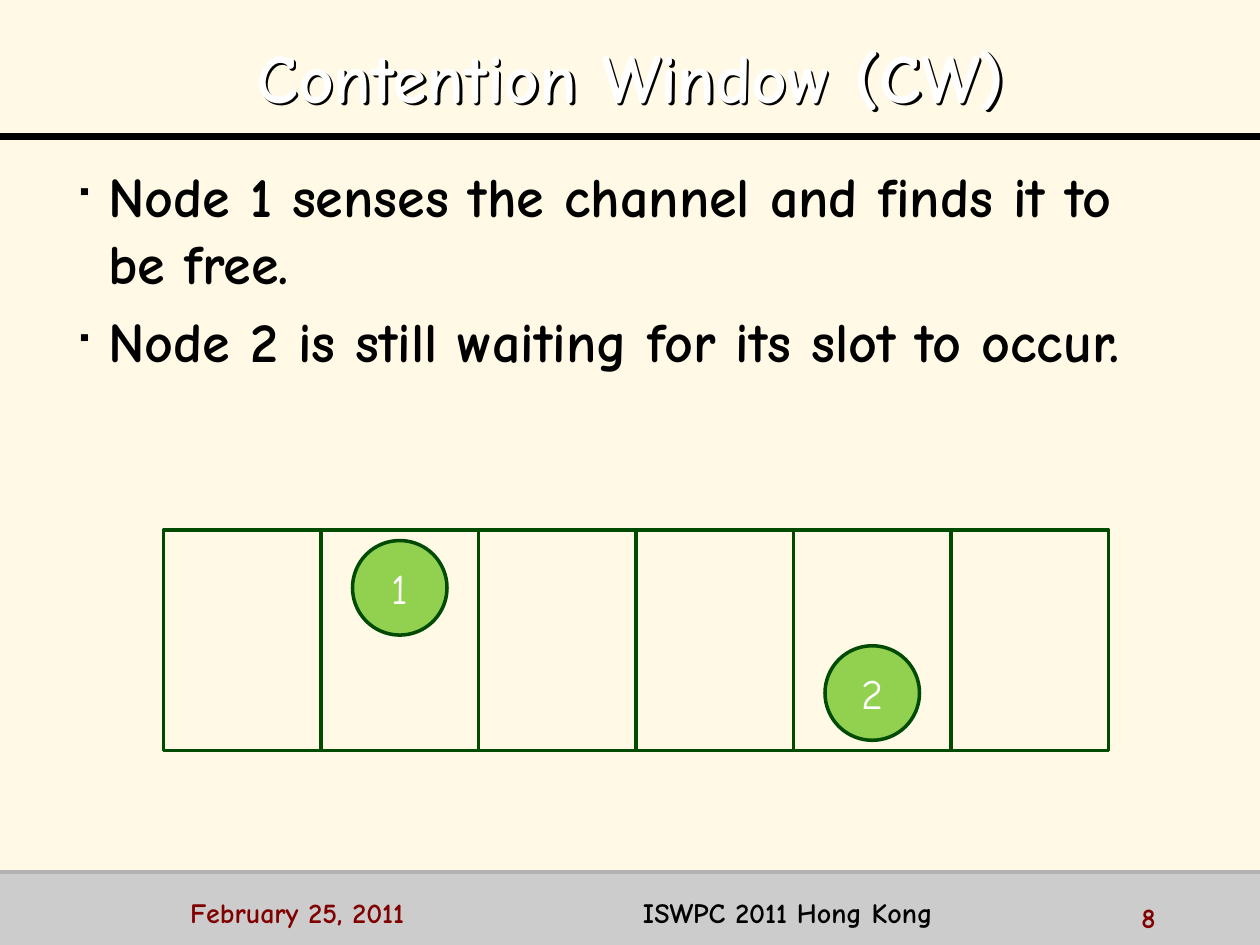
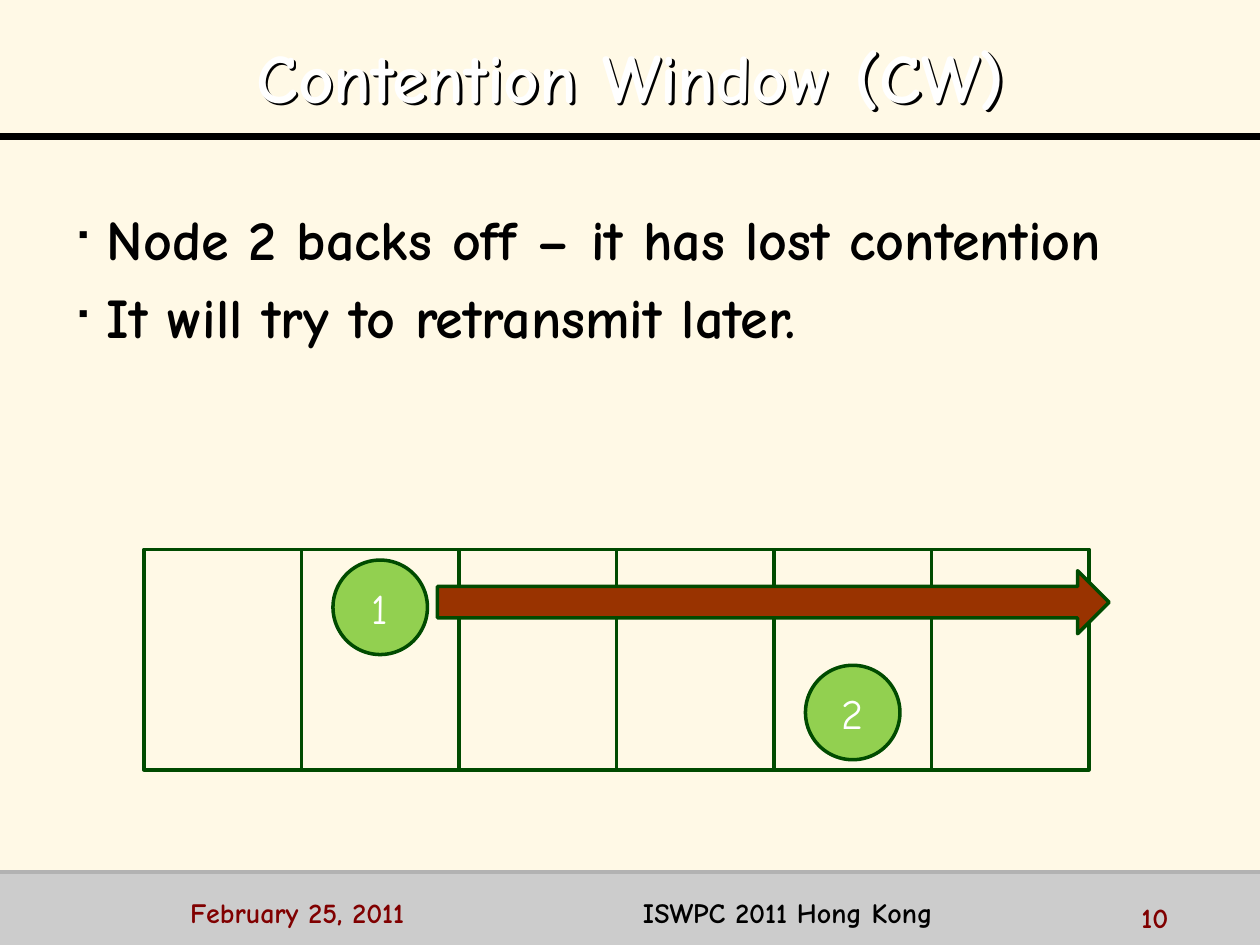
import lxml.etree
import pptx
import pptx.dml.color
import pptx.enum.shapes
import pptx.enum.text
import pptx.oxml.ns
import pptx.util

qn = pptx.oxml.ns.qn
Pt = pptx.util.Pt
Form = pptx.enum.shapes.MSO_SHAPE
Align = pptx.enum.text.PP_ALIGN
Anchor = pptx.enum.text.MSO_ANCHOR
sub = lxml.etree.SubElement

COLORS = {
    "paper": "FFF9E6", "band": "CCCCCC", "edge": "B2B2B2", "ink": "000000",
    "light": "FFFFFF", "date": "800000", "slot": "004B00", "node": "92D050",
    "send": "993300",
}
HUES = {k: pptx.dml.color.RGBColor.from_string(v) for k, v in COLORS.items()}
FONT = "Comic Neue"
COLS, ROWS = 40, 30
SLOTS, SLOT_W, SLOT_H = 6, 5, 7
NODE = 3

PAGES = [
    {"number": "8", "body": (2.04, 4.92), "window": (5.19, 16.82), "sends": False,
     "points": ["Node 1 senses the channel and finds it to be free.",
                "Node 2 is still waiting for its slot to occur."]},
    {"number": "10", "body": (2, 6.28), "window": (4.57, 17.44), "sends": True,
     "points": ["Node 2 backs off – it has lost contention",
                "It will try to retransmit later."]},
]

deck = pptx.Presentation()
deck.slide_width = pptx.util.Inches(10)
deck.slide_height = pptx.util.Inches(7.5)
unit = deck.slide_width / COLS
back = deck.slide_master.background.fill
back.solid()
back.fore_color.rgb = HUES["paper"]


def write(para, text, size, hue, bold=True):
    run = para.add_run()
    run.text = text
    run.font.size = Pt(size)
    run.font.bold = bold
    run.font.name = FONT
    run.font.color.rgb = HUES[hue]


def draw(slide, form, box, fill=None, line=None):
    """Add a preset shape, with its box in grid units."""
    shape = slide.shapes.add_shape(form, *[round(n * unit) for n in box])
    shape.shadow.inherit = False
    if fill:
        shape.fill.solid()
        shape.fill.fore_color.rgb = HUES[fill]
    else:
        shape.fill.background()
    if line:
        shape.line.color.rgb = HUES[line]
        shape.line.width = Pt(2)
    else:
        shape.line.fill.background()
    return shape


for page in PAGES:
    slide = deck.slides.add_slide(deck.slide_layouts[5])

    # Band and rules
    draw(slide, Form.RECTANGLE, (0, 27.68, COLS, ROWS - 27.68), "band")
    for row, hue, width in [(4.32, "ink", 4), (27.68, "edge", 2)]:
        y = round(row * unit)
        rule = slide.shapes.add_connector(
            pptx.enum.shapes.MSO_CONNECTOR.STRAIGHT, 0, y, deck.slide_width, y)
        rule.line.color.rgb = HUES[hue]
        rule.line.width = Pt(width)
        sub(rule._element.spPr, qn("a:effectLst"))

    # Title: the unfilled box casts its shadow from the letters
    title = slide.shapes.title
    title.left, title.top, title.width, title.height = [
        round(n * unit) for n in (0.8, 0.52, 38.44, 3.48)]
    title.fill.background()
    effect = sub(title._element.spPr, qn("a:effectLst"))
    shade = sub(effect, qn("a:outerShdw"), dist="25400", dir="2700000",
                algn="ctr", rotWithShape="0")
    sub(shade, qn("a:srgbClr"), val=COLORS["ink"])
    title.text_frame.vertical_anchor = Anchor.MIDDLE
    para = title.text_frame.paragraphs[0]
    para.alignment = Align.CENTER
    para.line_spacing = 1.1
    write(para, "Contention Window (CW)", 39.6, "light")

    # Bullet points
    body = slide.shapes.add_textbox(
        *[round(n * unit) for n in (*page["body"], 36, 21)]).text_frame
    body.word_wrap = True
    for i, point in enumerate(page["points"]):
        para = body.add_paragraph() if i else body.paragraphs[0]
        props = para._p.get_or_add_pPr()
        props.set("marL", str(round(unit)))
        props.set("indent", str(-round(unit)))
        tint = sub(props, qn("a:buClr"))
        sub(tint, qn("a:srgbClr"), val=COLORS["ink"])
        sub(props, qn("a:buSzPct"), val="38000")
        sub(props, qn("a:buChar"), char="▪")
        if i:
            para.space_before = Pt(6.4)
        write(para, point, 32, "ink")

    # Slots of the window, and the nodes in two of them
    left, top = page["window"]
    for i in range(SLOTS):
        draw(slide, Form.RECTANGLE, (left + i * SLOT_W, top, SLOT_W, SLOT_H),
             line="slot")
    for name, slot, drop in [("1", 1, 0.34), ("2", 4, 3.68)]:
        x = left + slot * SLOT_W + (SLOT_W - NODE) / 2
        node = draw(slide, Form.OVAL, (x, top + drop, NODE, NODE), "node", "slot")
        node.text_frame.vertical_anchor = Anchor.MIDDLE
        para = node.text_frame.paragraphs[0]
        para.alignment = Align.CENTER
        write(para, name, 24, "light", False)
    if page["sends"]:
        draw(slide, Form.RIGHT_ARROW, (left + 9.32, top + 0.68, 21.32, 2),
             "send", "slot")

    # Footer: date and venue on one tabbed line, then the page number
    for box, parts in [
        ((5.64, 28.24, 29.12, 1.24),
         [("February 25, 2011", "date"), ("\tISWPC 2011 Hong Kong", "ink")]),
        ((35.84, 28.38, 4, 1), [(page["number"], "date")]),
    ]:
        foot = slide.shapes.add_textbox(*[round(n * unit) for n in box]).text_frame
        foot.word_wrap = True
        para = foot.paragraphs[0]
        if len(parts) > 1:
            tabs = sub(para._p.get_or_add_pPr(), qn("a:tabLst"))
            sub(tabs, qn("a:tab"), pos=str(round(14.38 * unit)), algn="l")
        for text, hue in parts:
            write(para, text, 16, hue)

deck.save("out.pptx")
